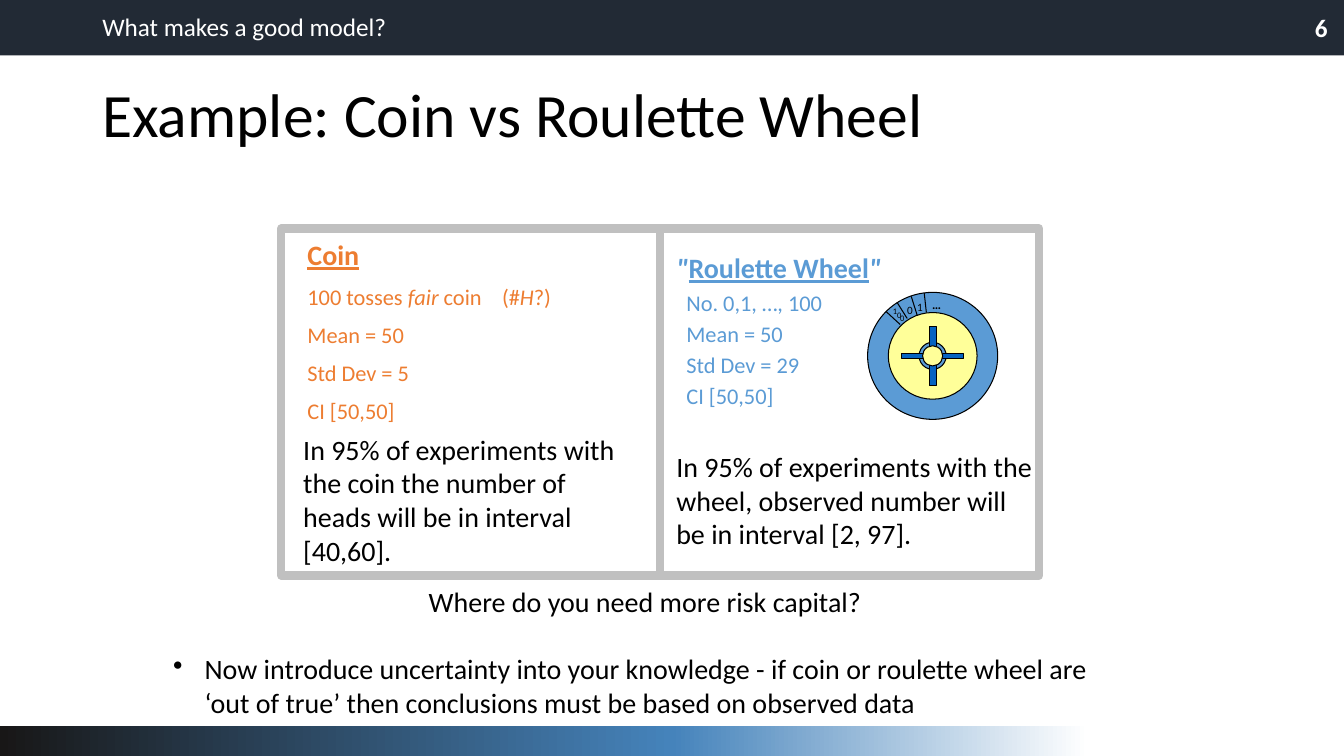
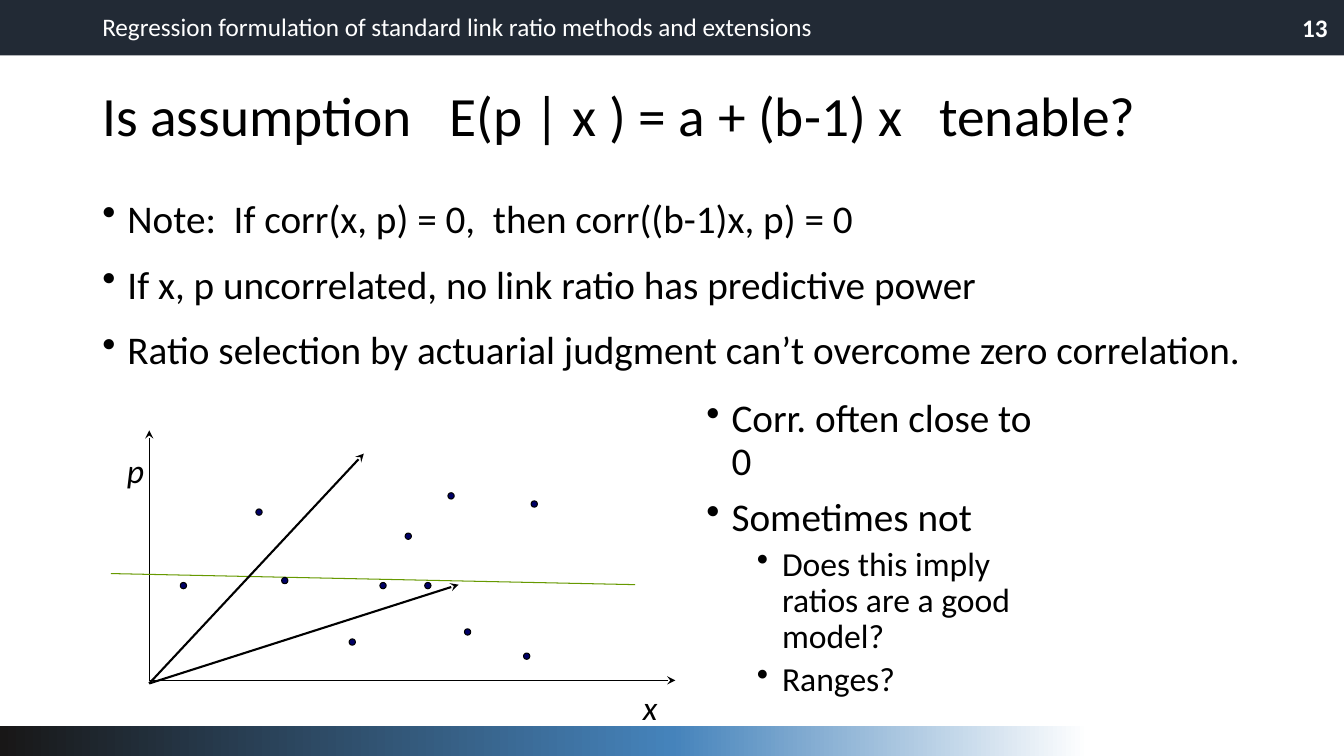
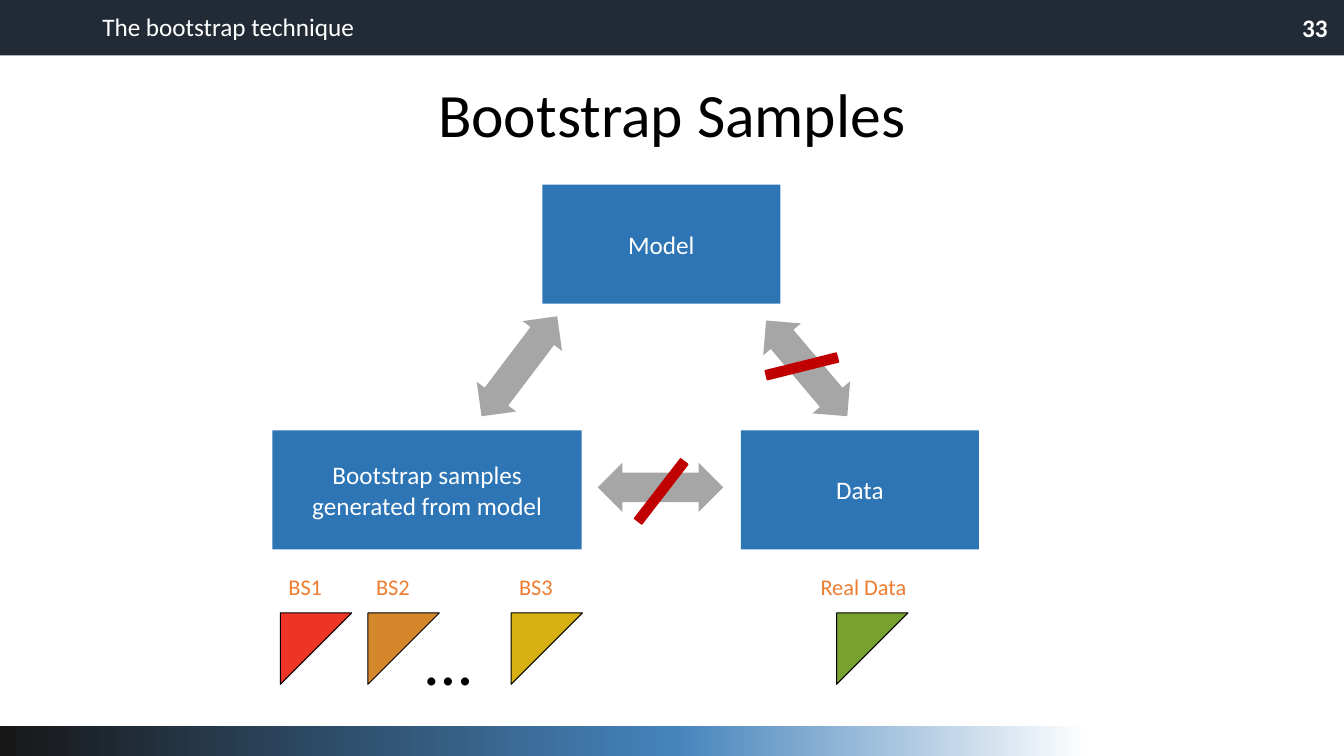
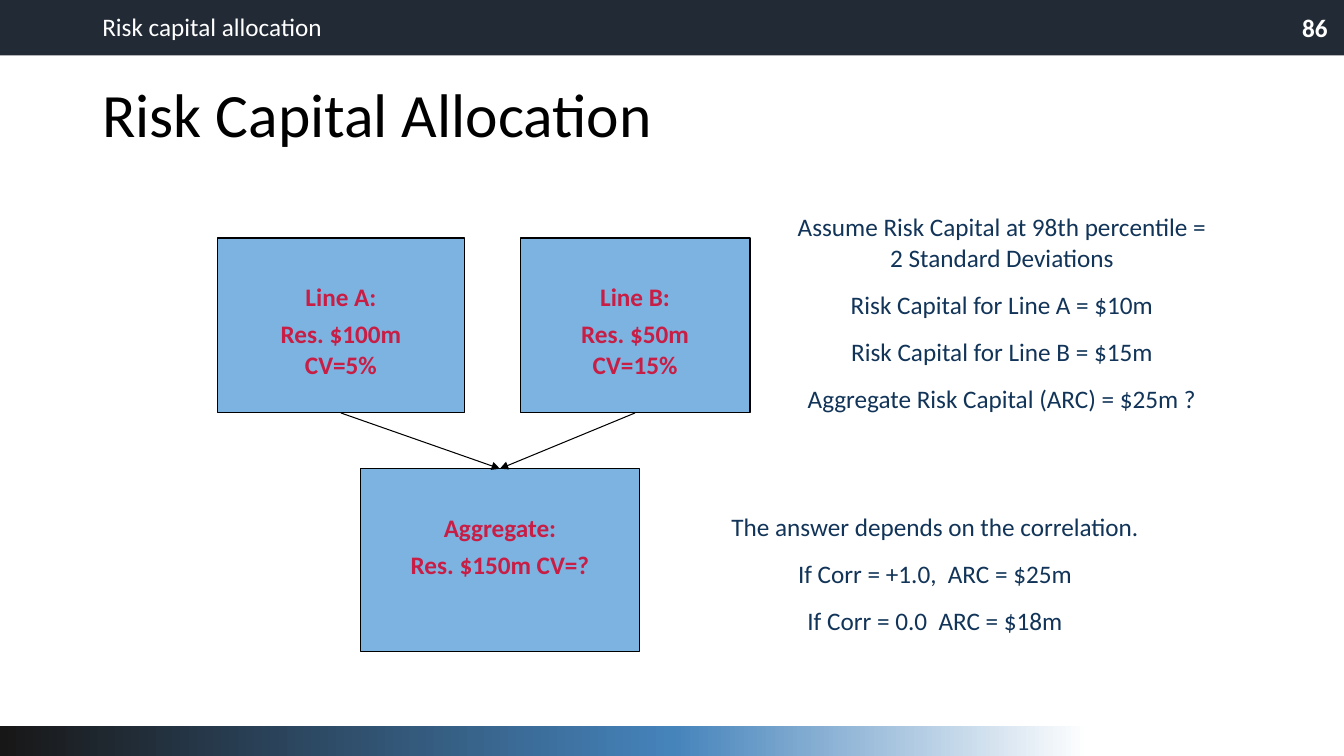
"""Build four slides on reserving models, bootstrap samples and risk capital."""
from dataclasses import dataclass

from lxml import etree
from copy import deepcopy
from pptx import Presentation, util as u
from pptx.dml import color
from pptx.enum import shapes, text
from pptx.oxml import ns

Pt = u.Pt
KIND = shapes.MSO_SHAPE
MID = text.PP_ALIGN.CENTER
RIGHT = text.PP_ALIGN.RIGHT
FONT = "Calibri"
PAD = (7.2, 3.6, 7.2, 3.6)
FLAT = (0, 0, 0, 0)
TINY = (1.4, 0.7, 1.4, 0.7)
HUES = {
    "band": "222A35", "dark": "181717", "mid": "4583BB", "white": "FFFFFF",
    "black": "000000", "sky": "5B9BD5", "orange": "ED7D31", "frame": "C0C0C0",
    "cream": "FFFF99", "cross": "0563C1", "trend": "669900", "dot": "000066",
    "box": "2E75B6", "arrow": "A6A6A6", "strike": "C00000", "red": "EE3424",
    "amber": "D5872B", "gold": "D7B012", "green": "78A22F", "navy": "113458",
    "pale": "7CB3E1", "rose": "C81E45",
}


@dataclass
class Para:
    runs: object
    size: float = 18
    tint: str = "black"
    bold: bool = False
    slant: bool = False
    align: object = None
    lead: float = None
    gap: float = 0
    after: float = 0
    left: float = 0
    mark: float = 0
    tabs: tuple = ()
    level: int = 0


def rgb(name):
    return color.RGBColor.from_string(HUES[name])


def sub(node, tag, **attrs):
    return etree.SubElement(node, ns.qn(tag), **attrs)


def style(para, item, first):
    para.alignment = item.align
    para.level = item.level
    if item.lead:
        para.line_spacing = item.lead
    if item.gap and not first:
        para.space_before = Pt(item.gap)
    if item.after:
        para.space_after = Pt(item.after)
    props = para._p.get_or_add_pPr()
    if item.left:
        props.set("marL", str(Pt(item.left)))
        props.set("indent", str(-Pt(item.mark)))
    if item.mark:
        sub(props, "a:buChar", char="•")
    if item.tabs:
        stops = sub(props, "a:tabLst")
        for stop in item.tabs:
            sub(stops, "a:tab", pos=str(Pt(stop)), algn="l")
    font = para.font
    font.name, font.size = FONT, Pt(item.size)
    font.bold, font.italic = item.bold, item.slant
    font.color.rgb = rgb(item.tint)


def write(shape, items, pad=PAD, anchor=text.MSO_ANCHOR.TOP):
    frame = shape.text_frame
    frame.word_wrap = True
    frame.vertical_anchor = anchor
    (frame.margin_left, frame.margin_top,
     frame.margin_right, frame.margin_bottom) = map(Pt, pad)
    for pos, item in enumerate(items):
        para = frame.add_paragraph() if pos else frame.paragraphs[0]
        style(para, item, pos == 0)
        runs = item.runs
        for words, flags in [(runs, "")] if isinstance(runs, str) else runs:
            run = para.add_run()
            run.text = words
            if "i" in flags:
                run.font.italic = True
            if "u" in flags:
                run.font.underline = True


def label(page, at, *items, **opts):
    write(page.shapes.add_textbox(*map(Pt, at)), items, **opts)


def draw(page, kind, at, fill=None, line=None, width=0.75, turn=0, adj=()):
    shape = page.shapes.add_shape(kind, *map(Pt, at))
    shape.shadow.inherit = False
    shape.rotation = turn
    for pos, value in enumerate(adj):
        shape.adjustments[pos] = value
    if fill:
        shape.fill.solid()
        shape.fill.fore_color.rgb = rgb(fill)
    else:
        shape.fill.background()
    if line:
        shape.line.color.rgb = rgb(line)
        shape.line.width = Pt(width)
    else:
        shape.line.fill.background()
    return shape


def round_at(page, kind, x, y, wide, high, fill, **opts):
    at = (x - wide / 2, y - high / 2, wide, high)
    draw(page, kind, at, fill, "black", **opts)


def link(page, start, end, tint="black", width=0.75, tip=None):
    line = page.shapes.add_connector(
        shapes.MSO_CONNECTOR.STRAIGHT, *map(Pt, start + end))
    line.line.color.rgb = rgb(tint)
    line.line.width = Pt(width)
    if tip:
        sub(line.line._get_or_add_ln(), "a:tailEnd", type=tip)
    sub(line.element.spPr, "a:effectLst")


def fade(page):
    band = draw(page, KIND.RECTANGLE, (0, 518.4, 960, 21.6))
    fill = band.fill
    fill.gradient()
    fill.gradient_angle = 0
    stops = band.element.spPr.find(".//" + ns.qn("a:gsLst"))
    stops.append(deepcopy(stops[0]))
    marks = ((0, "dark"), (0.5, "mid"), (0.81, "white"))
    for stop, (pos, tint) in zip(fill.gradient_stops, marks):
        stop.position = pos
        stop.color.rgb = rgb(tint)


def start(deck, topic, number, title, size=44, **opts):
    page = deck.slides.add_slide(deck.slide_layouts[6])
    draw(page, KIND.RECTANGLE, (0, 0, 960, 39.6), "band")
    fade(page)
    label(page, (66, 53.3, 828, 62), Para(title, size, lead=0.9, **opts),
          anchor=text.MSO_ANCHOR.MIDDLE)
    label(page, (66, 4.3, 523, 29), Para(topic, tint="white"))
    label(page, (739.4, 5, 216, 29),
          Para(number, tint="white", bold=True, align=RIGHT))
    return page


def wheel(page):
    x, y = 666.2, 254.2
    for kind, wide, high, fill, adj in (
            (KIND.OVAL, 92.9, 90.7, "sky", ()),
            (KIND.OVAL, 63.4, 61.9, "cream", ()),
            (KIND.OVAL, 19.4, 19.4, "sky", ()),
            (KIND.CROSS, 43.9, 42.5, "cross", (0.455,)),
            (KIND.OVAL, 14.4, 14.4, "cream", ())):
        round_at(page, kind, x, y, wide, high, fill, adj=adj)
    for inner, outer in (
            ((643, 231.8), (632.9, 222.5)), ((648, 227.5), (640.8, 216)),
            ((655.2, 225.4), (650.9, 211.7)), ((661.7, 223.2), (660.2, 209.5))):
        link(page, inner, outer)
    label(page, (658.8, 208.8, 26.6, 15), Para("…", 9, bold=True))
    for digit, left, top, size in (
            ("1", 653.8, 213.8, 8), ("0", 646.6, 216, 8),
            ("1", 636.5, 218.2, 6), ("0", 639.4, 221, 6), ("0", 641.5, 223.2, 6)):
        label(page, (left, top, 7.2, size + 1.2), Para(digit, size), pad=TINY)


def coin(deck):
    page = start(deck, "What makes a good model?", "6",
                 "Example: Coin vs Roulette Wheel")
    for left in (200.9, 471.6):
        draw(page, KIND.RECTANGLE, (left, 163.4, 270.7, 247.7),
             line="frame", width=6)
    toss = [("100 tosses ", ""), ("fair", "i"), (" coin\t(#", ""),
            ("H", "i"), ("?)", "")]
    label(page, (219.6, 170, 253, 136),
          Para([("Coin", "u")], 20, "orange", bold=True),
          Para(toss, 16, "orange", gap=8, tabs=(139,)),
          *(Para(fact, 16, "orange", gap=8)
            for fact in ("Mean = 50", "Std Dev = 5", "CI [50,50]")), pad=FLAT)
    name = [('"', "i"), ("Roulette Wheel", "u"), ('"', "i")]
    label(page, (476, 175.7, 253, 125), Para(name, 20, "sky", bold=True),
          *(Para(fact, 16, "sky", gap=3, left=7.2)
            for fact in ("No. 0,1, …, 100", "Mean = 50", "Std Dev = 29",
                         "CI [50,50]")))
    label(page, (209.5, 305.3, 253, 104), Para(
        "In 95% of experiments with the coin the number of heads "
        "will be in interval [40,60].", 20))
    label(page, (476, 317.5, 272, 80), Para(
        "In 95% of experiments with the wheel, observed number "
        "will be in interval [2, 97].", 20))
    wheel(page)
    label(page, (116.6, 414, 688.3, 104),
          Para("Where do you need more risk capital?", 20, align=MID),
          Para("Now introduce uncertainty into your knowledge - if coin or "
               "roulette wheel are ‘out of true’ then conclusions must be "
               "based on observed data", 20, gap=24, left=22.5, mark=22.5))


def ratio(deck):
    page = start(
        deck, "Regression formulation of standard link ratio methods and extensions",
        "13", "Is assumption\tE(p | x ) = a + (b-1) x\ttenable?", 39.6,
        tabs=(248, 598))
    label(page, (66, 131.8, 828, 150), *(
        Para(words, 28, lead=1.1, gap=10, left=18, mark=18) for words in (
            "Note:  If corr(x, p) = 0,  then corr((b-1)x, p) = 0",
            "If x, p uncorrelated, no link ratio has predictive power",
            "Ratio selection by actuarial judgment can’t overcome zero "
            "correlation.")))
    label(page, (497.5, 281.5, 250, 232.5),
          *(Para(words, 28, lead=0.9, gap=10, left=18, mark=18)
            for words in ("Corr. often close to 0", "Sometimes not")),
          *(Para(words, 24, lead=0.9, gap=5, left=54, mark=18, level=1)
            for words in ("Does this imply ratios are a good model?",
                          "Ranges?")))
    link(page, (106.6, 486), (482.4, 486), tip="stealth")
    link(page, (106.6, 486.7), (106.6, 307.4), tip="stealth")
    link(page, (79.2, 409.7), (453.6, 417.6), "trend")
    for end in ((259.9, 324), (327.6, 417.6)):
        link(page, (106.6, 488.2), end, width=1.5, tip="stealth")
    for name, left, top in (("p", 83.5, 318.2), ("x", 452.2, 487.4)):
        label(page, (left, top, 23.8, 45), Para(name, 24, slant=True))
    for x, y in ((381.6, 360), (376.2, 468.7), (322.2, 354.2), (251.6, 458.6),
                 (185, 365.8), (131, 418.3), (334, 451.4), (291.6, 383),
                 (305.6, 418.3), (273.6, 418.3), (203.4, 414.7)):
        round_at(page, KIND.FLOWCHART_CONNECTOR, x, y, 4.5, 4.5, "dot")


def boot(deck):
    page = start(deck, "The bootstrap technique", "33", "Bootstrap Samples",
                 align=MID)
    for words, left, top, wide in (
            ("Model", 387.4, 131.8, 170),
            ("Bootstrap samples generated from model", 194.6, 307.4, 221),
            ("Data", 529.2, 307.4, 170)):
        box = draw(page, KIND.RECTANGLE, (left, top, wide, 85), "box")
        write(box, [Para(words, tint="white", align=MID)],
              anchor=text.MSO_ANCHOR.MIDDLE)
    for left, top, turn in ((326.2, 244, 307.1), (531.4, 245.5, 49.7),
                            (427, 330.5, 0)):
        draw(page, KIND.LEFT_RIGHT_ARROW, (left, top, 89.6, 35.3), "arrow",
             turn=turn, adj=(0.6, 0.5))
    for left, top, wide, turn in ((537.1, 247.7, 71.3, 346),
                                  (435.6, 337, 73.4, 307.7)):
        draw(page, KIND.MATH_MINUS, (left, top, wide, 28), "strike", "strike",
             1, turn)
    for words, left, shift, fill in (
            ("BS1", 200.2, 5.8, "red"), ("BS2", 262.8, 5.8, "amber"),
            ("BS3", 365, 5.8, "gold"), ("Real Data", 597.6, -11.5, "green")):
        draw(page, KIND.RIGHT_TRIANGLE, (left, 437.8, 51, 51), fill, "black",
             turn=90)
        label(page, (left + shift, 409.7, 74, 19.4),
              Para(words, 16, "orange"), pad=FLAT)
    label(page, (296.6, 437.8, 51, 65.5), Para("…", 48))


def capital(deck):
    page = start(deck, "Risk capital allocation", "86",
                 "Risk Capital Allocation")
    for at, lines in (
            ((155.5, 170, 176, 124.8), ("Line A:", "Res. $100m CV=5%")),
            ((371.5, 170, 164.2, 124.8), ("Line B:", "Res. $50m CV=15%")),
            ((257.8, 334.8, 198.7, 130.3), ("Aggregate:", "Res. $150m CV=?"))):
        box = draw(page, KIND.FLOWCHART_PROCESS, at, "pale", "black")
        write(box, [Para(words, tint="rose", bold=True, align=MID, after=5)
                    for words in lines], pad=(24, 31, 24, 0))
    for x in (243.5, 453.6):
        link(page, (x, 295), (357.1, 334.8), tip="triangle")
    for at, lines in (
            ((560.9, 147.6, 309.6, 174),
             ("Assume Risk Capital at 98th percentile = 2 Standard Deviations",
              "Risk Capital for Line A = $10m", "Risk Capital for Line B = $15m",
              "Aggregate Risk Capital (ARC) = $25m ?")),
            ((499, 361.4, 337.7, 97),
             ("The answer depends on the correlation.",
              "If Corr = +1.0,  ARC = $25m", "If Corr = 0.0  ARC = $18m"))):
        label(page, at, *(Para(words, tint="navy", align=MID, after=12)
                          for words in lines))


def main():
    deck = Presentation()
    deck.slide_width, deck.slide_height = Pt(960), Pt(540)
    for build in (coin, ratio, boot, capital):
        build(deck)
    deck.save("out.pptx")


if __name__ == "__main__":
    main()
